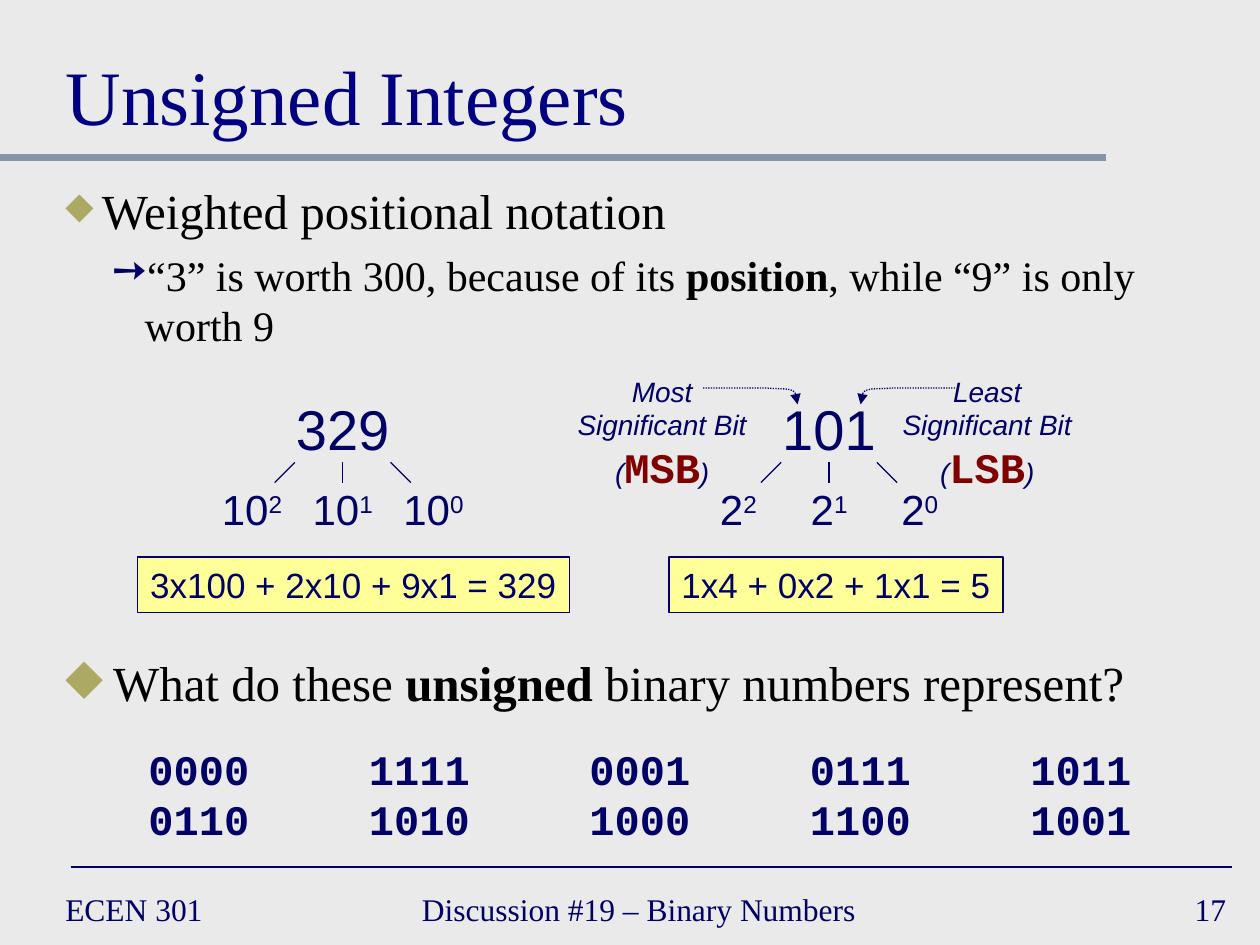
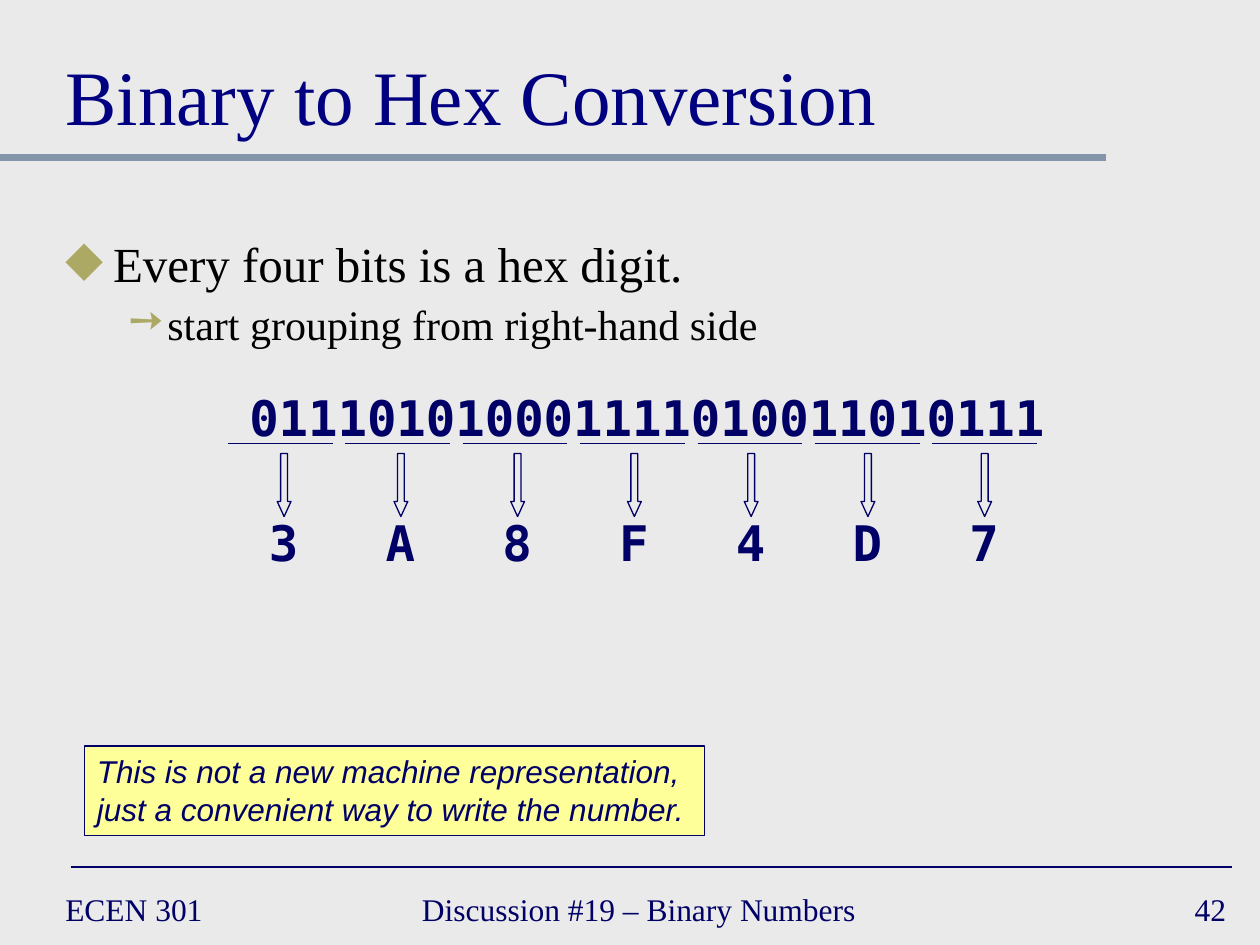
from lxml import etree
from pptx import Presentation
from pptx.dml.color import RGBColor
from pptx.enum import dml, shapes, text
from pptx.oxml import ns
from pptx.util import Inches, Pt

NAVY, TITLE_BLUE, BAND, PAPER = "000066", "000080", "8495A9", "EAEAEA"
YELLOW, OLIVE, MAROON, BLACK = "FFFF99", "ACA964", "800000", "000000"
SERIF, SANS, COURIER, MONO = "Times New Roman", "Arial", "Courier New", "DejaVu Sans Mono"
LEFT, CENTER, RIGHT = text.PP_ALIGN.LEFT, text.PP_ALIGN.CENTER, text.PP_ALIGN.RIGHT
TOP, MIDDLE, BOTTOM = text.MSO_ANCHOR.TOP, text.MSO_ANCHOR.MIDDLE, text.MSO_ANCHOR.BOTTOM


def rgb(value):
    return RGBColor.from_string(value)


def spread(first, last, count):
    """Evenly spaced positions from first to last."""
    return [first + i * (last - first) / (count - 1) for i in range(count)]


def sub(parent, tag, **attrs):
    return etree.SubElement(parent, ns.qn(tag), **attrs)


def curve_points(start, segments, steps=8):
    """Points along a chain of cubic curves."""
    points = [start]
    for c1, c2, end in segments:
        p0 = points[-1]
        for t in (n / steps for n in range(1, steps + 1)):
            s = 1 - t
            points.append(tuple(
                s**3 * a + 3 * s * s * t * b + 3 * s * t * t * c + t**3 * d
                for a, b, c, d in zip(p0, c1, c2, end)))
    return points


class Deck:
    def __init__(self):
        self.prs = Presentation()
        self.prs.slide_width, self.prs.slide_height = Inches(10), Inches(7.5)
        fill = self.prs.slide_master.background.fill
        fill.solid()
        fill.fore_color.rgb = rgb(PAPER)

    def new_slide(self, title, number):
        """Start a slide with the shared title, bands and footer."""
        self.s = self.prs.slides.add_slide(self.prs.slide_layouts[5])
        self.line((0, 1.25), (8.78, 1.25), BAND, 4)
        self.line((0.56, 6.88), (9.78, 6.88), NAVY, 1)
        for left, width, words, align in (
                (0.42, 2.17, "ECEN 301", LEFT),
                (3.25, 3.83, "Discussion #19 – Binary Numbers", LEFT),
                (7.75, 2.08, str(number), RIGHT)):
            self.text((left, 7, width, 0.42), [words], 18, SERIF, align=align, anchor=MIDDLE)
        sp = self.s.shapes.title
        sp.left, sp.top, sp.width, sp.height = map(Inches, (0.42, 0.17, 9.17, 1))
        self.set_text(sp, [title], 44, SERIF, TITLE_BLUE, anchor=BOTTOM)

    def set_text(self, sp, paragraphs, size, font, color=NAVY, align=LEFT, anchor=TOP,
                 wrap=True, **style):
        """Fill a shape; a paragraph is a string or a list of (text, changes)."""
        tf = sp.text_frame
        tf.auto_size = text.MSO_AUTO_SIZE.NONE
        tf.word_wrap, tf.vertical_anchor = wrap, anchor
        base = dict(size=size, font=font, color=color, **style)
        for i, content in enumerate(paragraphs):
            p = tf.add_paragraph() if i else tf.paragraphs[0]
            p.alignment = align
            if isinstance(content, str):
                p.text = content
                changes = [{}] * len(p.runs)
            else:
                for words, _ in content:
                    p.add_run().text = words
                changes = [change for _, change in content]
            for r, change in zip(p.runs, changes):
                self.format_run(r, **{**base, **change})
        return sp

    def format_run(self, r, size, font, color, bold=False, italic=False, raised=False):
        r.font.size, r.font.name = Pt(size), font
        r.font.bold, r.font.italic = bold, italic
        r.font.color.rgb = rgb(color)
        if raised:
            r._r.get_or_add_rPr().set("baseline", "30000")

    def text(self, box, paragraphs, size, font, **options):
        sp = self.s.shapes.add_textbox(*map(Inches, box))
        return self.set_text(sp, paragraphs, size, font, **options)

    def bullets(self, box, items, line_spacing=None):
        """Items are (content, size, symbol, colour, percent, margin, hang)."""
        sp = self.text(box, [item[0] for item in items], 28, SERIF, color=BLACK)
        for i, (p, item) in enumerate(zip(sp.text_frame.paragraphs, items)):
            _, size, symbol, color, percent, margin, hang = item
            p.level = i
            if line_spacing:
                p.line_spacing = line_spacing
            if i:
                p.space_before = Pt(6)
            pPr = p._p.get_or_add_pPr()
            pPr.set("marL", str(Inches(margin)))
            pPr.set("indent", str(-Inches(hang)))
            sub(sub(pPr, "a:buClr"), "a:srgbClr", val=color)
            sub(pPr, "a:buSzPct", val=str(percent * 1000))
            sub(pPr, "a:buChar", char=symbol)
            for r in p.runs:
                r.font.size = Pt(size)

    def line(self, start, end, color=NAVY, width=0.75):
        cx = self.s.shapes.add_connector(
            shapes.MSO_CONNECTOR.STRAIGHT, *map(Inches, (*start, *end)))
        cx.line.color.rgb, cx.line.width = rgb(color), Pt(width)
        sub(cx._element.spPr, "a:effectLst")

    def outline(self, sp, fill=None):
        sp.shadow.inherit = False
        if fill:
            sp.fill.solid()
            sp.fill.fore_color.rgb = rgb(fill)
        else:
            sp.fill.background()
        sp.line.color.rgb, sp.line.width = rgb(NAVY), Pt(0.75)

    def note(self, box, words, size, **options):
        sp = self.s.shapes.add_shape(shapes.MSO_SHAPE.RECTANGLE, *map(Inches, box))
        self.outline(sp, YELLOW)
        self.set_text(sp, [words], size, SANS, **options)

    def down_arrow(self, left, top, width, height):
        sp = self.s.shapes.add_shape(
            shapes.MSO_SHAPE.DOWN_ARROW, *map(Inches, (left, top, width, height)))
        sp.adjustments[0], sp.adjustments[1] = 0.5, 1.09
        self.outline(sp)

    def dotted_arrow(self, points):
        points = [(Inches(x), Inches(y)) for x, y in points]
        builder = self.s.shapes.build_freeform(*points[0])
        builder.add_line_segments(points[1:], close=False)
        sp = builder.convert_to_shape()
        self.outline(sp)
        sp.line.dash_style = dml.MSO_LINE.ROUND_DOT
        sub(sp.line._get_or_add_ln(), "a:tailEnd", type="triangle")

    def place_values(self, center, number, base, label_width):
        """A number with a branch to the weight of each digit."""
        self.text((center - 0.47, 3.08, 0.94, 0.63), [number], 32, SANS,
                  align=CENTER, wrap=False)
        for side, power in zip((-1, 0, 1), "210"):
            self.text((center + 0.72 * side - label_width / 2, 3.79, label_width, 0.5),
                      [[(base, {}), (power, {"raised": True})]], 24, SANS,
                      align=CENTER, wrap=False)
            self.line((center + 0.54 * side, 3.83), (center + 0.38 * side, 3.67))

    def bit_label(self, left, word, short):
        code = dict(size=24, font=COURIER, color=MAROON, italic=False, bold=True)
        self.text((left, 2.92, 1.55, 1.03),
                  [word, "Significant Bit", [("(", {}), (short, code), (")", {})]],
                  16, SANS, align=CENTER, wrap=False, italic=True)


def unsigned_integers(deck):
    deck.new_slide("Unsigned Integers", 17)

    # Positional notation
    bold = {"bold": True}
    deck.bullets((0.42, 1.38, 8.92, 1.53), [
        ("Weighted positional notation", 28, "◆", OLIVE, 75, 0.29, 0.29),
        ([("“3” is worth 300, because of its ", {}), ("position", bold),
          (", while “9” is only worth 9", {})], 24, "➙", NAVY, 100, 0.63, 0.26)])

    # Decimal and binary examples
    binary_center = 6.58
    deck.place_values(2.72, "329", "10", 0.7)
    deck.place_values(binary_center, "101", "2", 0.51)
    deck.note((1.09, 4.42, 3.43, 0.44), "3x100 + 2x10 + 9x1 = 329", 20,
              align=CENTER, wrap=False)
    deck.note((5.31, 4.42, 2.65, 0.44), "1x4 + 0x2 + 1x1 = 5", 20,
              align=CENTER, wrap=False)

    # Most and least significant bits, with mirrored arrows
    deck.bit_label(4.48, "Most", "MSB")
    deck.bit_label(7.06, "Least", "LSB")
    to_msb = curve_points((5.58, 3.08), [
        ((5.66, 3.08), (5.96, 3.08), (6.08, 3.08)),
        ((6.19, 3.09), (6.24, 3.08), (6.29, 3.1)),
        ((6.33, 3.12), (6.32, 3.19), (6.33, 3.21))])
    deck.dotted_arrow(to_msb)
    deck.dotted_arrow([(2 * binary_center - x, y) for x, y in to_msb])

    # Exercise
    deck.bullets((0.42, 5.13, 9.14, 0.62), [
        ([("What do these ", {}), ("unsigned", bold), (" binary numbers represent?", {})],
         28, "◆", OLIVE, 100, 0.38, 0.38)])
    pairs = (("0000", "0110"), ("1111", "1010"), ("0001", "1000"),
             ("0111", "1100"), ("1011", "1001"))
    for left, pair in zip(spread(1.08, 8.08, len(pairs)), pairs):
        deck.text((left, 5.85, 1, 0.9), pair, 24, COURIER, wrap=False, bold=True)


def binary_to_hex(deck):
    deck.new_slide("Binary to Hex Conversion", 42)

    # Rule
    deck.bullets((0.42, 1.86, 9.14, 0.95), [
        ("Every four bits is a hex digit.", 28, "◆", OLIVE, 100, 0.38, 0.38),
        ("start grouping from right-hand side", 24, "➙", OLIVE, 100, 0.81, 0.31)],
        line_spacing=0.9)

    # Bits grouped in fours, each with its hex digit
    deck.text((1.72, 3.03, 6.83, 0.57), ["011101010001111010011010111"], 28, MONO,
              align=CENTER, bold=True)
    digits = "3A8F4D7"
    for left in spread(1.81, 7.4, len(digits)):
        deck.line((left, 3.52), (left + 0.83, 3.52))
    for left, digit in zip(spread(1.71, 7.27, len(digits)), digits):
        deck.text((left, 4.02, 1.08, 0.57), [digit], 28, MONO, align=CENTER, bold=True)
        deck.down_arrow(left + 0.49, 3.6, 0.11, 0.5)

    # Remark
    deck.note((0.67, 5.92, 4.92, 0.71),
              "This is not a new machine representation,\v"
              "just a convenient way to write the number.", 18, italic=True)


def main():
    deck = Deck()
    unsigned_integers(deck)
    binary_to_hex(deck)
    deck.prs.save("out.pptx")


if __name__ == "__main__":
    main()
